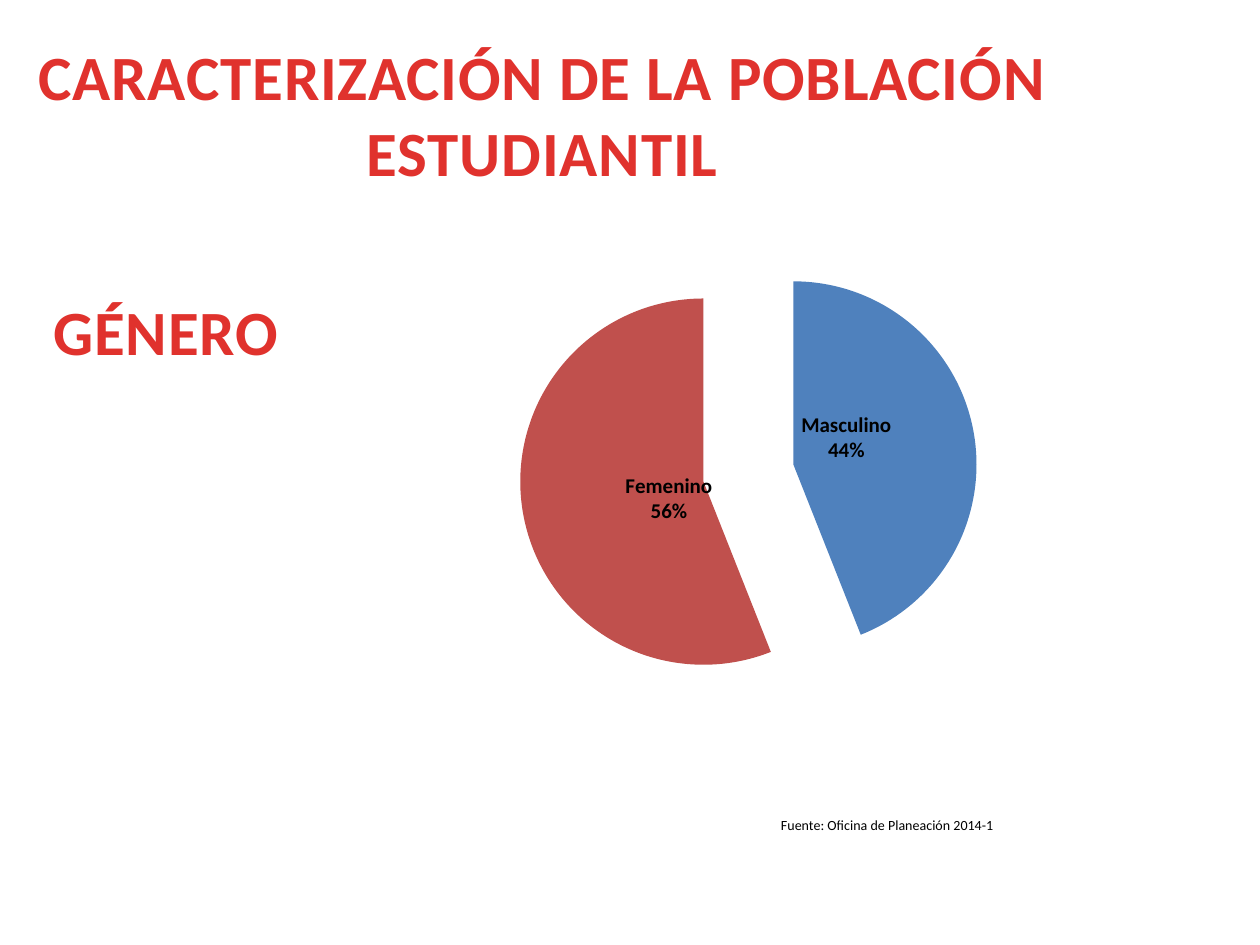
from dataclasses import dataclass

from pptx import Presentation
from pptx.chart.data import CategoryChartData
from pptx.dml.color import RGBColor
from pptx.enum.chart import XL_CHART_TYPE, XL_LABEL_POSITION
from pptx.enum.shapes import MSO_SHAPE
from pptx.enum.text import MSO_ANCHOR, PP_ALIGN
from pptx.oxml import parse_xml
from pptx.oxml.ns import nsdecls
from pptx.util import Inches, Pt

PIE = XL_CHART_TYPE.PIE
LABEL_CENTER = XL_LABEL_POSITION.CENTER
RECTANGLE = MSO_SHAPE.RECTANGLE
TOP = MSO_ANCHOR.TOP
CENTER, LEFT = PP_ALIGN.CENTER, PP_ALIGN.LEFT
TITLE_ONLY = 5


@dataclass(frozen=True)
class Theme:
    font: str = "Calibri"
    red: RGBColor = RGBColor(0xE0, 0x32, 0x2D)
    blue: RGBColor = RGBColor(0x4F, 0x81, 0xBD)
    brick: RGBColor = RGBColor(0xC0, 0x50, 0x4D)
    black: RGBColor = RGBColor(0, 0, 0)
    white: RGBColor = RGBColor(0xFF, 0xFF, 0xFF)
    heading: Pt = Pt(36)
    label: Pt = Pt(12)
    chart: Pt = Pt(10)
    source: Pt = Pt(8)


THEME = Theme()

# Name, share, colour, label offset as a fraction of the chart size
GENDERS = [
    ("Masculino", 0.44, THEME.blue, (-0.04, -0.02)),
    ("Femenino", 0.56, THEME.brick, (0.06, 0)),
]


def style_font(font, size, color, bold=False):
    font.name = THEME.font
    font.size = size
    font.bold = bold
    font.color.rgb = color


def fill_heading(sp, text):
    tf = sp.text_frame
    tf.word_wrap = False
    tf.vertical_anchor = TOP
    tf.text = text
    for p in tf.paragraphs:
        p.alignment = CENTER
        p.line_spacing = 1
        p.space_before = Pt(0)
        style_font(p.font, THEME.heading, THEME.red, bold=True)
        for r in p.runs:
            r.font._element.set("spc", "50")


def add_title(slide, text, left, top, width, height):
    sp = slide.shapes.title
    sp.left, sp.top, sp.width, sp.height = left, top, width, height
    fill_heading(sp, text)


def add_heading(slide, text, left, top, width, height):
    fill_heading(slide.shapes.add_textbox(left, top, width, height), text)


def add_gender_pie(slide, left, top, width, height):
    data = CategoryChartData(number_format="0%")
    data.categories = [str(n) for n in range(1, len(GENDERS) + 1)]
    data.add_series("Series 1", [share for _, share, *_ in GENDERS])
    chart = slide.shapes.add_chart(PIE, left, top, width, height, data).chart
    chart.has_title = False
    chart.has_legend = False
    style_font(chart.font, THEME.chart, THEME.black)
    plot = chart.plots[0]
    plot.vary_by_categories = True
    series = plot.series[0]

    # Series labels and explosion
    labels = series.data_labels
    labels.show_value = True
    labels.number_format = "0%"
    labels.number_format_is_linked = False
    series.format.fill.solid()
    series.format.fill.fore_color.rgb = THEME.blue
    series._element.find("{*}spPr").addnext(
        parse_xml(f'<c:explosion {nsdecls("c")} val="25"/>'))

    # Slices and their labels
    for i, (name, share, color, _) in enumerate(GENDERS):
        point = series.points[i]
        point.format.fill.solid()
        point.format.fill.fore_color.rgb = color
        label = point.data_label
        label.text_frame.text = f"{name}\n{share:.0%}"
        for p in label.text_frame.paragraphs:
            for r in p.runs:
                style_font(r.font, THEME.label, THEME.black, bold=True)
        label.position = LABEL_CENTER

    # Label offsets
    for dlbl, (*_, (dx, dy)) in zip(series._element.xpath(".//c:dLbl"), GENDERS):
        dlbl.insert(1, parse_xml(
            f'<c:layout {nsdecls("c")}><c:manualLayout>'
            f'<c:x val="{dx}"/><c:y val="{dy}"/>'
            '</c:manualLayout></c:layout>'))


def add_source(slide, text, left, top, width, height):
    sp = slide.shapes.add_shape(RECTANGLE, left, top, width, height)
    sp.shadow.inherit = False
    sp.fill.solid()
    sp.fill.fore_color.rgb = THEME.white
    sp.line.fill.background()
    tf = sp.text_frame
    tf.word_wrap = True
    tf.vertical_anchor = TOP
    tf.text = text
    p = tf.paragraphs[0]
    p.alignment = LEFT
    style_font(p.font, THEME.source, THEME.black)


def main():
    prs = Presentation()
    prs.slide_width, prs.slide_height = Inches(10), Inches(7.5)
    slide = prs.slides.add_slide(prs.slide_layouts[TITLE_ONLY])

    # Headings
    add_title(slide, "CARACTERIZACIÓN DE LA POBLACIÓN\nESTUDIANTIL",
              Inches(0.16), Inches(0.25), Inches(8.29), Inches(1.31))
    add_heading(slide, "GÉNERO",
                Inches(0.31), Inches(2.27), Inches(2.01), Inches(0.71))

    # Chart and its source
    add_gender_pie(slide, Inches(2.27), Inches(1.8), Inches(7.34), Inches(3.91))
    add_source(slide, "Fuente: Oficina de Planeación 2014-1",
               Inches(6.1), Inches(6.43), Inches(3.9), Inches(0.24))

    prs.save("out.pptx")


if __name__ == "__main__":
    main()
